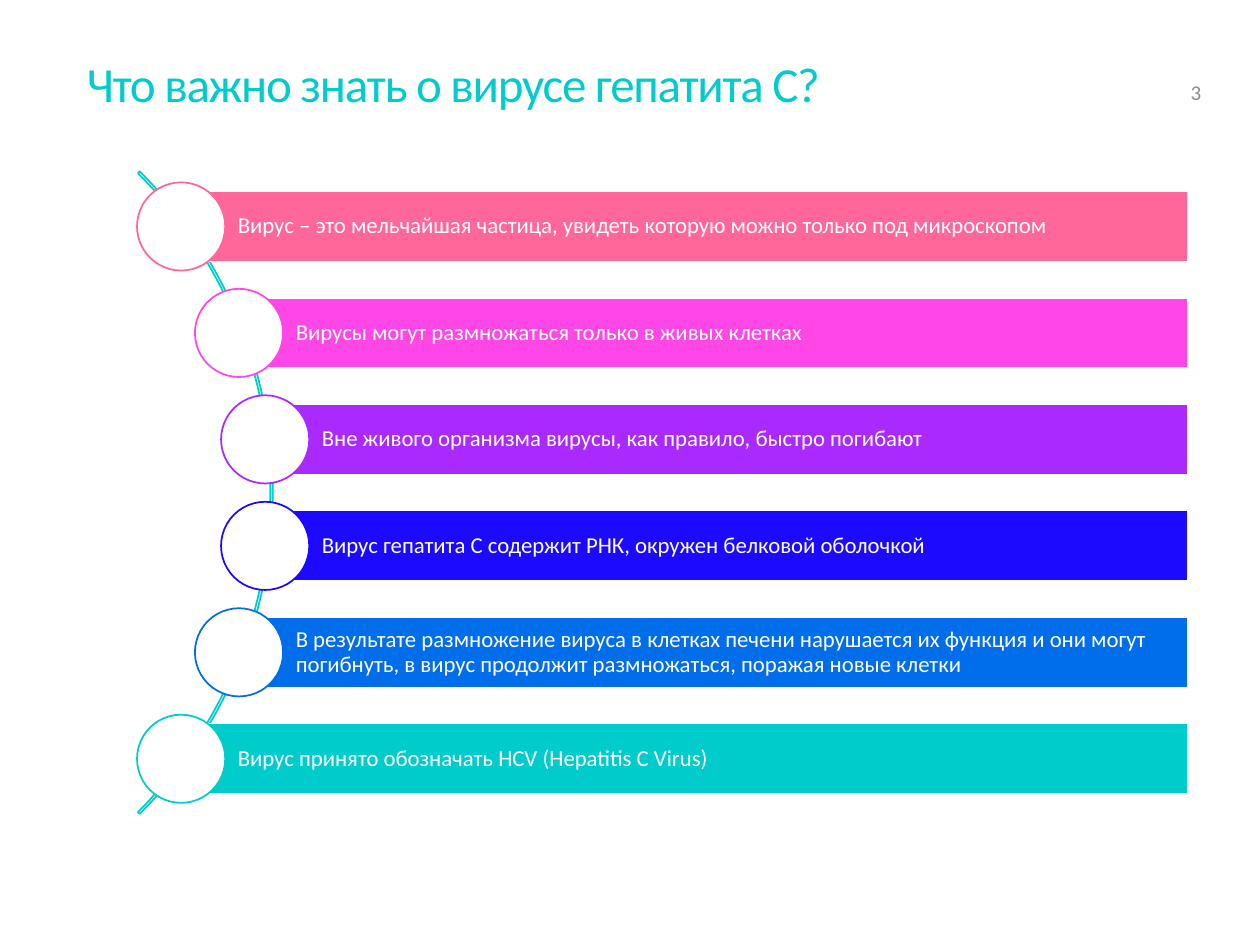
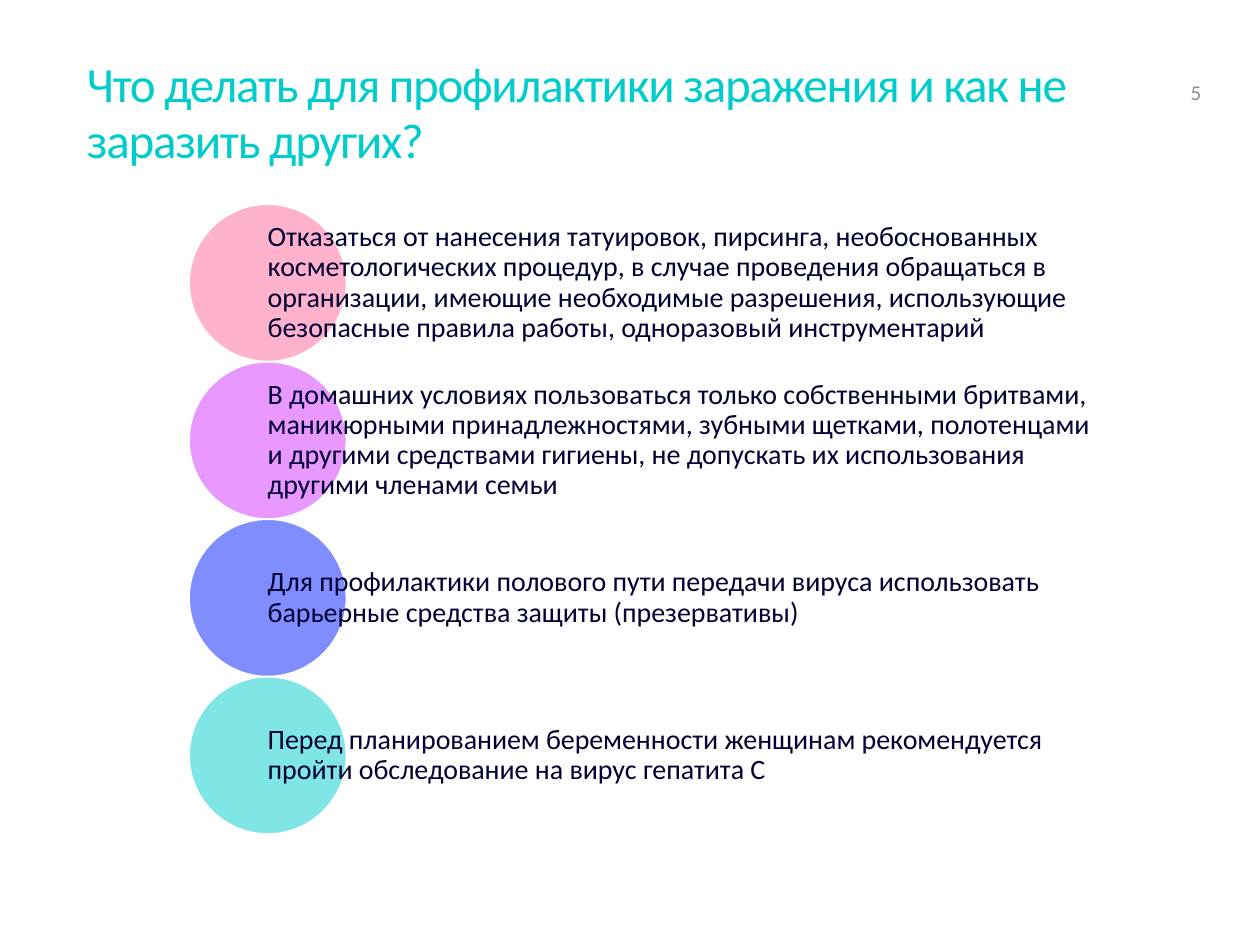
from dataclasses import dataclass
from math import sqrt

from lxml.etree import SubElement
from pptx import Presentation
from pptx.dml.color import RGBColor
from pptx.enum.shapes import MSO_SHAPE as SHAPE
from pptx.enum.text import MSO_ANCHOR as ANCHOR, PP_ALIGN as ALIGN
from pptx.oxml.ns import qn
from pptx.shapes.autoshape import Shape
from pptx.shapes.shapetree import GroupShapes
from pptx.slide import Slide
from pptx.text.text import TextFrame
from pptx.util import Inches, Length, Pt


@dataclass(frozen=True)
class Theme:
    font: str = "Calibri"
    teal: str = "00CCCC"
    pink: str = "FF6699"
    magenta: str = "FF47E7"
    purple: str = "A929FF"
    violet: str = "D233FF"
    indigo: str = "1B0AFF"
    blue: str = "006DEB"
    cobalt: str = "001CFF"
    white: str = "FFFFFF"
    ink: str = "000033"
    grey: str = "8C8C90"
    title_size: int = 28
    advice_size: int = 16
    fact_size: int = 13
    number_size: int = 12


THEME = Theme()


@dataclass(frozen=True)
class Box:
    left: float
    top: float
    width: float
    height: float

    def emu(self) -> tuple[Length, ...]:
        return tuple(Inches(v) for v in (self.left, self.top, self.width, self.height))


@dataclass(frozen=True)
class Item:
    color: str
    text: str


TITLE_BOX = Box(0.69, 0.4, 8.62, 1.03)
NUMBER_BOX = Box(9.45, 0.4, 0.38, 0.47)

FACTS = [
    Item(THEME.pink, "Вирус – это мельчайшая частица, увидеть которую можно только под микроскопом"),
    Item(THEME.magenta, "Вирусы могут размножаться только в живых клетках"),
    Item(THEME.purple, "Вне живого организма вирусы, как правило, быстро погибают"),
    Item(THEME.indigo, "Вирус гепатита С содержит РНК, окружен белковой оболочкой"),
    Item(THEME.blue, "В результате размножение вируса в клетках печени нарушается их функция и они могут "
                     "погибнуть, в вирус продолжит размножаться, поражая новые клетки"),
    Item(THEME.teal, "Вирус принято обозначать HCV (Hepatitis C Virus)"),
]

ADVICE = [
    Item(THEME.pink, "Отказаться от нанесения татуировок, пирсинга, необоснованных косметологических "
                     "процедур, в случае проведения обращаться в организации, имеющие необходимые "
                     "разрешения, использующие безопасные правила работы, одноразовый инструментарий"),
    Item(THEME.violet, "В домашних условиях пользоваться только собственными бритвами, маникюрными "
                       "принадлежностями, зубными щетками, полотенцами и другими средствами гигиены, "
                       "не допускать их использования другими членами семьи"),
    Item(THEME.cobalt, "Для профилактики полового пути передачи вируса использовать барьерные средства "
                       "защиты (презервативы)"),
    Item(THEME.teal, "Перед планированием беременности женщинам рекомендуется пройти обследование "
                     "на вирус гепатита С"),
]


def write(tf: TextFrame, text: str, size: int, color: str, anchor: ANCHOR,
          insets: tuple[float, float, float, float], line_spacing: float | Length = 1.0,
          tracking: float = 0) -> None:
    """Fill a frame with one left-aligned paragraph; insets run left, top, right, bottom."""
    sides = ("margin_left", "margin_top", "margin_right", "margin_bottom")
    frame_format = {"word_wrap": True, "vertical_anchor": anchor,
                    **dict(zip(sides, map(Inches, insets)))}
    for name, value in frame_format.items():
        setattr(tf, name, value)
    p = tf.paragraphs[0]
    p.alignment, p.line_spacing = ALIGN.LEFT, line_spacing
    r = p.add_run()
    r.text = text
    for name, value in {"name": THEME.font, "size": Pt(size)}.items():
        setattr(r.font, name, value)
    r.font.color.rgb = RGBColor.from_string(color)
    if tracking:
        r.font._element.set("spc", str(round(tracking * 100)))


def add_figure(shapes: GroupShapes, kind: SHAPE, box: Box, line: str,
               fill: str | None = None, opacity: int = 100) -> Shape:
    sp = shapes.add_shape(kind, *box.emu())
    sp.shadow.inherit = False
    sp.line.color.rgb = RGBColor.from_string(line)
    sp.line.width = Pt(1)
    if fill is None:
        sp.fill.background()
        return sp
    sp.fill.solid()
    sp.fill.fore_color.rgb = RGBColor.from_string(fill)
    if opacity < 100:
        color = sp.element.spPr.find(qn("a:solidFill")).find(qn("a:srgbClr"))
        SubElement(color, qn("a:alpha"), val=str(opacity * 1000))
    return sp


def add_titled_slide(prs: Presentation, title: str, number: int) -> Slide:
    s = prs.slides.add_slide(prs.slide_layouts[5])
    sp = s.shapes.title
    sp.left, sp.top, sp.width, sp.height = TITLE_BOX.emu()
    write(sp.text_frame, title, THEME.title_size, THEME.teal, ANCHOR.TOP,
          (0, 0.05, 0, 0.05), Pt(32), tracking=-0.7)
    page = s.shapes.add_textbox(*NUMBER_BOX.emu())
    write(page.text_frame, str(number), THEME.number_size, THEME.grey, ANCHOR.BOTTOM,
          (0, 0.04, 0, 0.04))
    return s


def draw_facts(s: Slide, facts: list[Item]) -> None:
    """Set bars along an arc, each starting at the centre of its circle."""
    arc_x, arc_y, arc_size, arc_band = -1.44, 3.91, 7.21, 0.02
    orbit, pitch, circle, bar_height, bar_right = 3.57, 0.845, 0.7, 0.56, 9.43
    shapes = s.shapes.add_group_shape().shapes
    arc = add_figure(shapes, SHAPE.BLOCK_ARC,
                     Box(arc_x - arc_size / 2, arc_y - arc_size / 2, arc_size, arc_size), THEME.teal)
    start_angle, end_angle = 315, 45
    for i, value in enumerate((start_angle * 0.6, end_angle * 0.6, arc_band / arc_size)):
        arc.adjustments[i] = value
    for i, fact in enumerate(facts):
        dy = (i - (len(facts) - 1) / 2) * pitch
        x, y = arc_x + sqrt(orbit ** 2 - dy ** 2), arc_y + dy
        bar = add_figure(shapes, SHAPE.RECTANGLE,
                         Box(x, y - bar_height / 2, bar_right - x, bar_height),
                         THEME.white, fact.color)
        write(bar.text_frame, fact.text, THEME.fact_size, THEME.white, ANCHOR.MIDDLE,
              (0.45, 0.04, 0.04, 0.04), 0.9)
        add_figure(shapes, SHAPE.OVAL, Box(x - circle / 2, y - circle / 2, circle, circle),
                   fact.color, THEME.white)


def draw_advice(s: Slide, advice: list[Item]) -> None:
    """Stack translucent circles with text that starts at their centres."""
    left, top, circle, text_width = 1.5, 1.62, 1.25, 6.67
    shapes = s.shapes.add_group_shape().shapes
    for i, item in enumerate(advice):
        y = top + i * circle
        add_figure(shapes, SHAPE.OVAL, Box(left, y, circle, circle),
                   THEME.white, item.color, opacity=50)
        label = shapes.add_textbox(*Box(left + circle / 2, y, text_width, circle).emu())
        write(label.text_frame, item.text, THEME.advice_size, THEME.ink, ANCHOR.MIDDLE,
              (0, 0.02, 0, 0.02), 0.9)


def main() -> None:
    prs = Presentation()
    prs.slide_width, prs.slide_height = Inches(10), Inches(7.5)
    draw_facts(add_titled_slide(prs, "Что важно знать о вирусе гепатита С?", 3), FACTS)
    draw_advice(add_titled_slide(
        prs, "Что делать для профилактики заражения и как не заразить других?", 5), ADVICE)
    prs.save("out.pptx")


if __name__ == "__main__":
    main()
